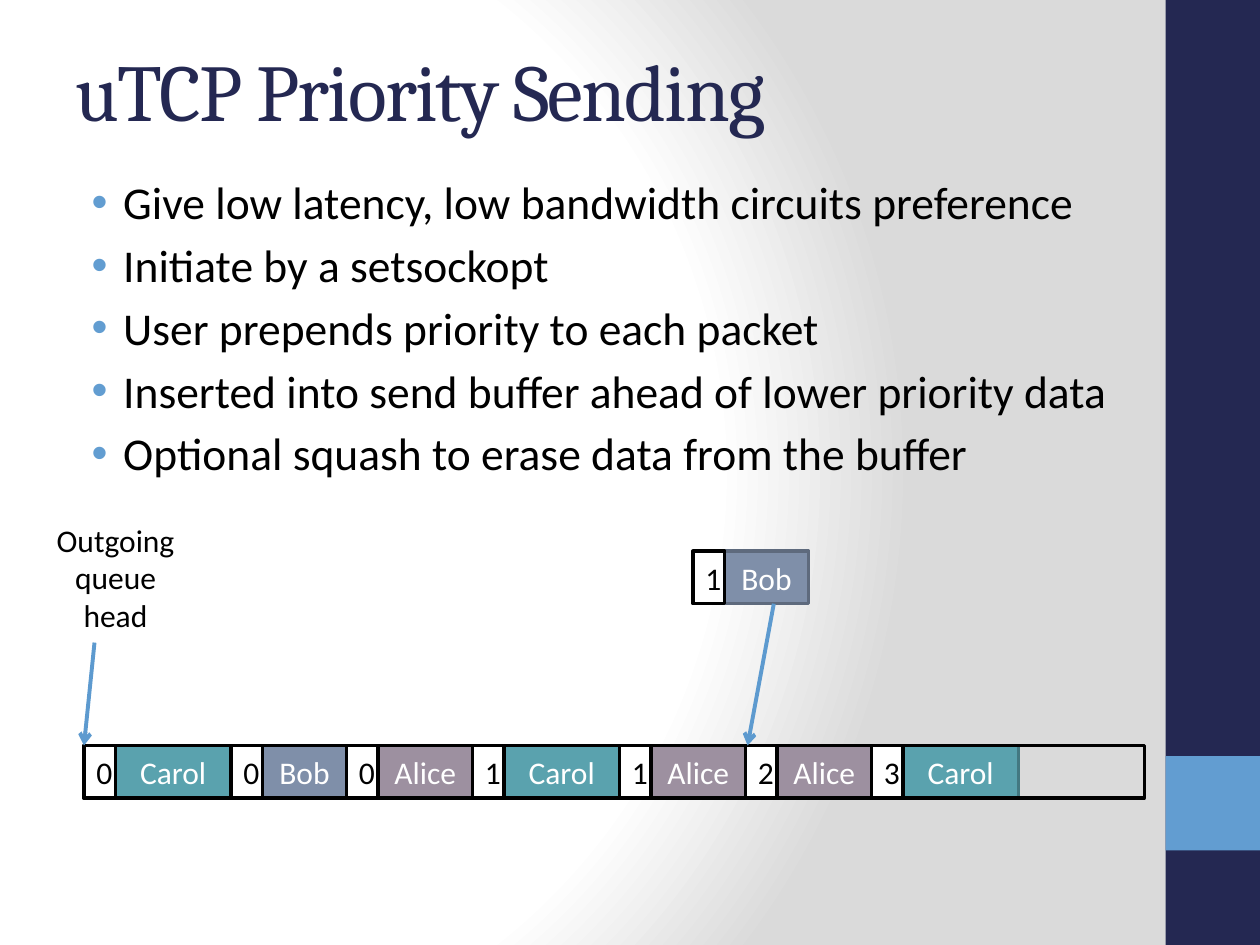
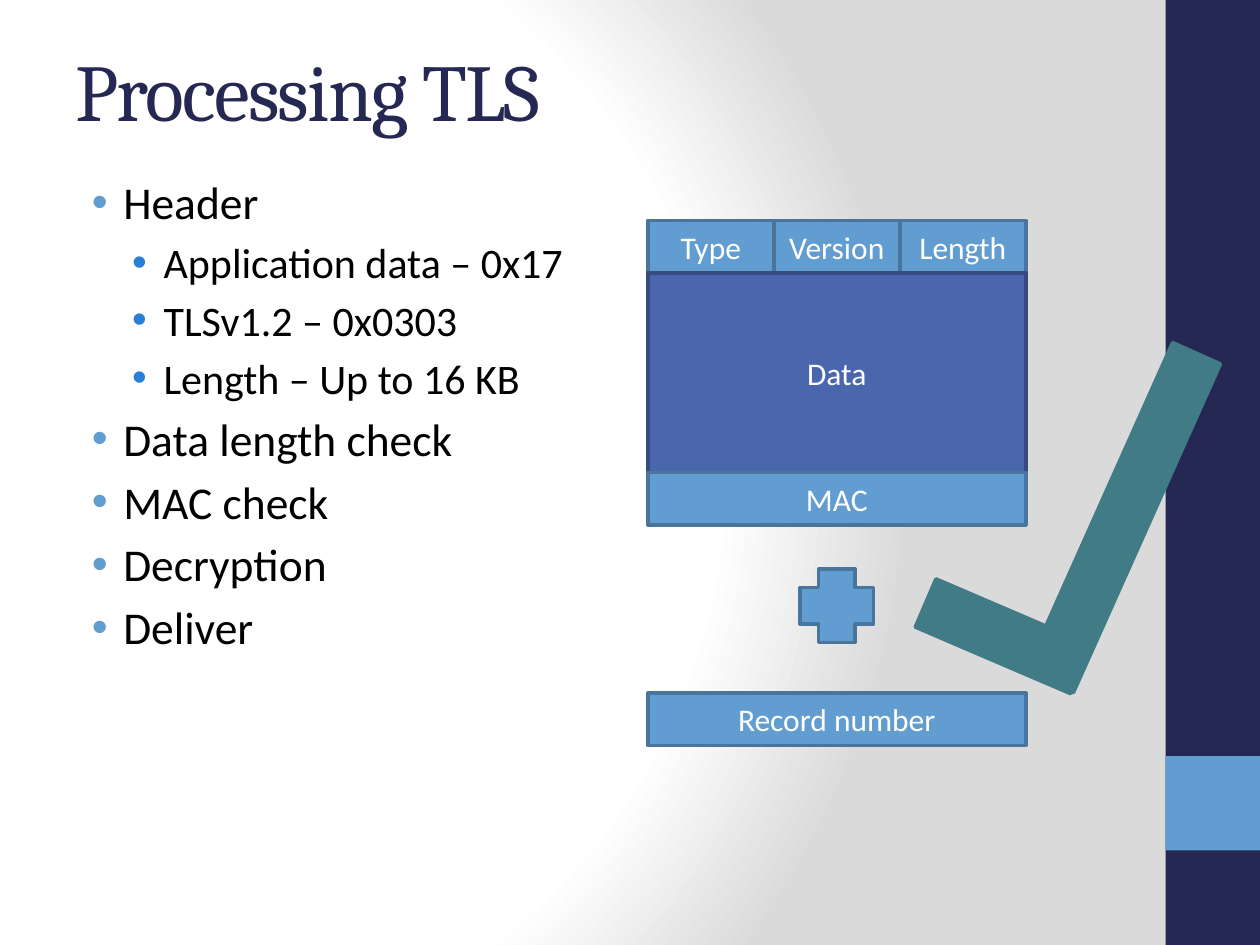
from dataclasses import dataclass
from itertools import accumulate

from lxml.etree import SubElement
from pptx import Presentation
from pptx.dml.color import RGBColor
from pptx.enum.shapes import MSO_CONNECTOR, MSO_SHAPE
from pptx.enum.text import MSO_ANCHOR, PP_ALIGN
from pptx.oxml import parse_xml
from pptx.oxml.ns import nsdecls, qn
from pptx.util import Inches, Pt

SLIDE_WIDTH, SLIDE_HEIGHT = Inches(10), Inches(7.5)
COLUMNS, ROWS = 120, 90
NAVY, SKY, WHITE, BLACK = "242852", "629DD1", "FFFFFF", "000000"
SKY_EDGE, ARROW, TICK = "49749B", "5D9ACF", "417B85"
HEADING_FONT, BODY_FONT = "Cambria", "Calibri"
CELL_ROWS, TAG_COLUMNS = 5, 3
QUEUE_COLUMN, QUEUE_ROW = 8, 71
RECORD_COLUMN, RECORD_COLUMNS, FIELD_COLUMNS = 61.7, 36, 12


@dataclass(frozen=True)
class Area:
    column: float
    row: float
    columns: float
    rows: float = CELL_ROWS


@dataclass(frozen=True)
class Sender:
    name: str
    columns: int
    fill: str
    edge: str


@dataclass(frozen=True)
class Packet:
    priority: int
    sender: Sender


@dataclass(frozen=True)
class BulletLevel:
    size: int
    color: str
    indent: float


CAROL = Sender("Carol", 11, "5AA2AE", "437881")
BOB = Sender("Bob", 8, "7F8FA9", "5E6A7D")
ALICE = Sender("Alice", 9, "9D90A0", "746B76")
QUEUE = [Packet(0, CAROL), Packet(0, BOB), Packet(0, ALICE), Packet(1, CAROL),
         Packet(1, ALICE), Packet(2, ALICE), Packet(3, CAROL)]
LEVELS = [BulletLevel(26, SKY, 0.38), BulletLevel(24, "297FD5", 0.7)]


def across(columns: float) -> int:
    return round(SLIDE_WIDTH * columns / COLUMNS)


def down(rows: float) -> int:
    return round(SLIDE_HEIGHT * rows / ROWS)


def place(area: Area) -> tuple:
    return across(area.column), down(area.row), across(area.columns), down(area.rows)


def rgb(color: str) -> RGBColor:
    return RGBColor.from_string(color)


def write(paragraph, text: str, *, size=18, font=BODY_FONT, color=BLACK,
          align=PP_ALIGN.LEFT, spacing=None):
    paragraph.alignment = align
    run = paragraph.add_run()
    run.text = text
    run.font.size, run.font.name = Pt(size), font
    run.font.color.rgb = rgb(color)
    if spacing is not None:
        run._r.get_or_add_rPr().set("spc", str(spacing * 100))


def add_frame(slide, area: Area, anchor=MSO_ANCHOR.TOP):
    frame = slide.shapes.add_textbox(*place(area)).text_frame
    frame.word_wrap = True
    frame.vertical_anchor = anchor
    return frame


def add_box(slide, area: Area, fill=None, edge=None, text="", color=WHITE,
            kind=MSO_SHAPE.RECTANGLE, rotation=0.0):
    box = slide.shapes.add_shape(kind, *place(area))
    box.shadow.inherit = False
    box.rotation = rotation
    if fill:
        box.fill.solid()
        box.fill.fore_color.rgb = rgb(fill)
    else:
        box.fill.background()
    if edge:
        box.line.color.rgb = rgb(edge)
        box.line.width = Pt(2)
    else:
        box.line.fill.background()
    if text:
        box.text_frame.vertical_anchor = MSO_ANCHOR.MIDDLE
        write(box.text_frame.paragraphs[0], text, color=color, align=PP_ALIGN.CENTER)


def add_arrow(slide, start: tuple, end: tuple):
    arrow = slide.shapes.add_connector(
        MSO_CONNECTOR.STRAIGHT, across(start[0]), down(start[1]), across(end[0]), down(end[1]))
    arrow.line.color.rgb = rgb(ARROW)
    arrow.line.width = Pt(2.25)
    SubElement(arrow.line._get_or_add_ln(), qn("a:tailEnd"), type="arrow")
    SubElement(arrow._element.spPr, qn("a:effectLst"))


def add_bullets(slide, area: Area, items: list):
    frame = add_frame(slide, area)
    for index, (depth, text) in enumerate(items):
        level = LEVELS[depth]
        paragraph = frame.add_paragraph() if index else frame.paragraphs[0]
        paragraph.level = depth
        if index:
            paragraph.space_before = Pt(round(level.size * 0.18, 1))
        properties = paragraph._p.get_or_add_pPr()
        properties.set("marL", str(Inches(level.indent)))
        properties.set("indent", str(-Inches(0.25)))
        bullet_color = SubElement(properties, qn("a:buClr"))
        SubElement(bullet_color, qn("a:srgbClr"), val=level.color)
        SubElement(properties, qn("a:buFont"), typeface="Arial")
        SubElement(properties, qn("a:buChar"), char="•")
        write(paragraph, text, size=level.size)


def set_background(master):
    master.background.fill.solid()
    stops = "".join(f'<a:gs pos="{share * 1000}"><a:srgbClr val="{color}"/></a:gs>'
                    for share, color in [(0, WHITE), (75, WHITE), (100, "DADADA")])
    gradient = parse_xml(
        f'<a:gradFill rotWithShape="1" {nsdecls("a")}><a:gsLst>{stops}</a:gsLst>'
        '<a:path path="circle">'
        '<a:fillToRect l="20000" t="50000" r="100000" b="50000"/></a:path></a:gradFill>')
    solid = master.element.find(f'.//{qn("p:bgPr")}/{qn("a:solidFill")}')
    solid.getparent().replace(solid, gradient)


def start_slide(deck, title: str):
    slide = deck.slides.add_slide(deck.slide_layouts[6])
    add_box(slide, Area(111, 0, 9, ROWS), NAVY)
    add_box(slide, Area(111, 72, 9, 9), SKY)
    heading = add_frame(slide, Area(6, 1, 100, 15), MSO_ANCHOR.MIDDLE)
    write(heading.paragraphs[0], title, size=46, font=HEADING_FONT, color=NAVY, spacing=-1)
    return slide


def add_packets(slide, packets: list, column: float, row: float):
    widths = [TAG_COLUMNS + packet.sender.columns for packet in packets]
    starts = list(accumulate(widths[:-1], initial=column))
    for start, packet in zip(starts, packets):
        sender = packet.sender
        add_box(slide, Area(start + TAG_COLUMNS, row, sender.columns),
                sender.fill, sender.edge, sender.name)
    for start, packet in zip(starts, packets):
        add_box(slide, Area(start, row, TAG_COLUMNS), WHITE, BLACK, str(packet.priority), BLACK)


def build_priority_sending(deck):
    slide = start_slide(deck, "uTCP Priority Sending")
    add_bullets(slide, Area(6, 16, 102, 69), [
        (0, "Give low latency, low bandwidth circuits preference"),
        (0, "Initiate by a setsockopt"),
        (0, "User prepends priority to each packet"),
        (0, "Inserted into send buffer ahead of lower priority data"),
        (0, "Optional squash to erase data from the buffer"),
    ])
    queue_head = add_frame(slide, Area(3, 49, 16, 12))
    write(queue_head.paragraphs[0], "Outgoing", align=PP_ALIGN.CENTER)
    write(queue_head.add_paragraph(), "queue head", align=PP_ALIGN.CENTER)
    add_packets(slide, QUEUE, QUEUE_COLUMN, QUEUE_ROW)
    add_box(slide, Area(QUEUE_COLUMN, QUEUE_ROW, 101), edge=BLACK)
    add_packets(slide, [Packet(1, BOB)], 66, 52.5)
    add_arrow(slide, (9, 61.2), (QUEUE_COLUMN, QUEUE_ROW))
    add_arrow(slide, (73.7, 57.5), (71.2, QUEUE_ROW))


def build_processing_tls(deck):
    slide = start_slide(deck, "Processing TLS")
    add_bullets(slide, Area(6, 16, 100, 69), [
        (0, "Header"),
        (1, "Application data – 0x17"),
        (1, "TLSv1.2 – 0x0303"),
        (1, "Length – Up to 16 KB"),
        (0, "Data length check"),
        (0, "MAC check"),
        (0, "Decryption"),
        (0, "Deliver"),
    ])
    for index, field in enumerate(["Type", "Version", "Length"]):
        add_box(slide, Area(RECORD_COLUMN + index * FIELD_COLUMNS, 21, FIELD_COLUMNS),
                SKY, SKY_EDGE, field)
    add_box(slide, Area(RECORD_COLUMN, 26, RECORD_COLUMNS, 19), "4A66AC", "374B7F", "Data")
    for row, part in [(45, "MAC"), (66, "Record number")]:
        add_box(slide, Area(RECORD_COLUMN, row, RECORD_COLUMNS), SKY, SKY_EDGE, part)
    plus_size = 7
    plus_column = RECORD_COLUMN + (RECORD_COLUMNS - plus_size) / 2
    add_box(slide, Area(plus_column, 54.2, plus_size, plus_size), SKY, SKY_EDGE,
            kind=MSO_SHAPE.CROSS)
    for stroke, rotation in [(Area(87.5, 58.1, 16.1), 23.2), (Area(89.8, 46.8, 34.3), 114.1)]:
        add_box(slide, stroke, TICK, TICK, rotation=rotation)


def main():
    deck = Presentation()
    deck.slide_width, deck.slide_height = SLIDE_WIDTH, SLIDE_HEIGHT
    set_background(deck.slide_master)
    build_priority_sending(deck)
    build_processing_tls(deck)
    deck.save("out.pptx")


if __name__ == "__main__":
    main()
